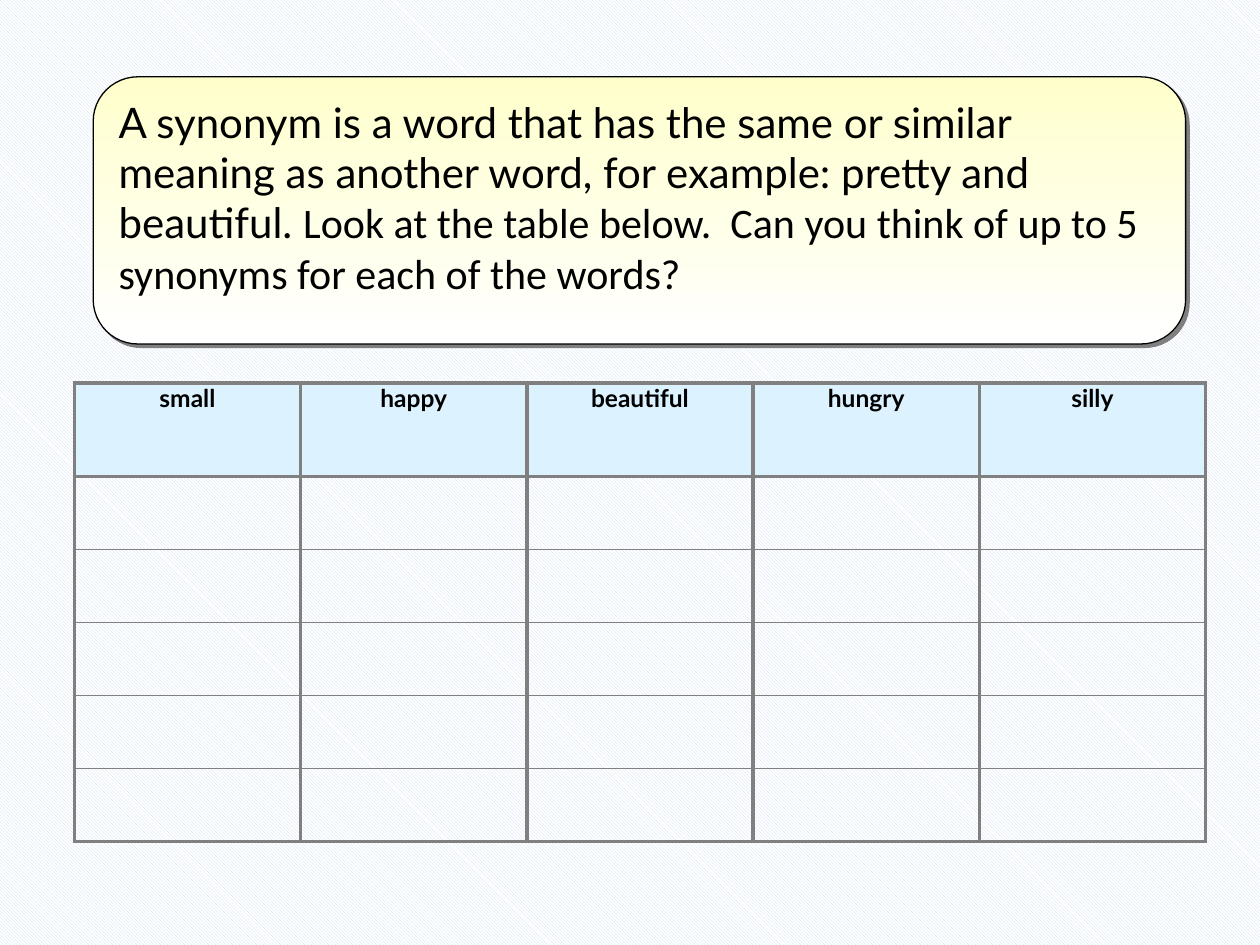
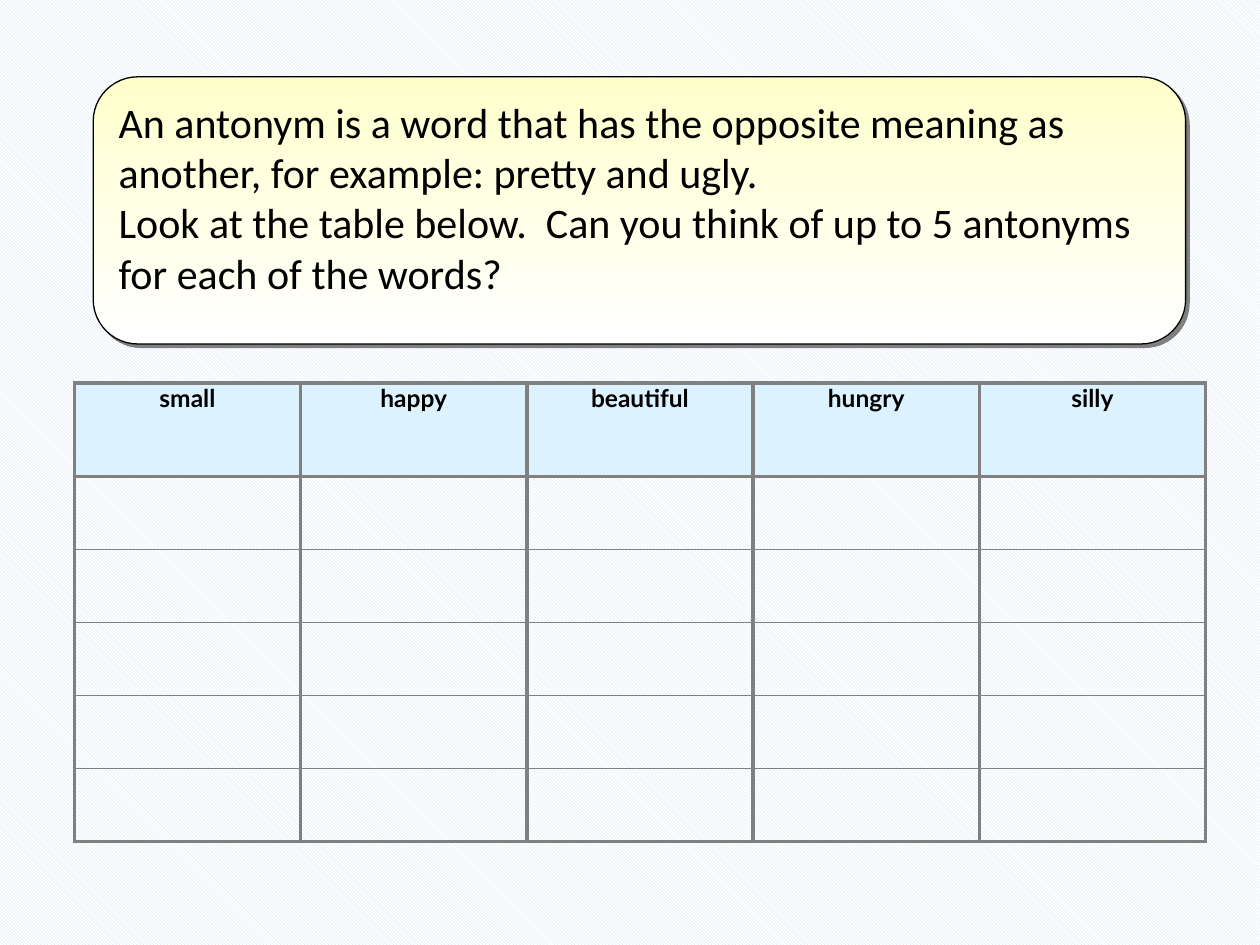
"""Build two vocabulary slides, one on synonyms and one on antonyms."""
from dataclasses import dataclass

import pptx
import pptx.dml.color
import pptx.enum.dml
import pptx.enum.shapes
import pptx.enum.text
import pptx.oxml
import pptx.oxml.ns
import pptx.util

EMU_PER_PX = 9144
COLORS = {
    "ink": "000000",
    "paper": "FFFFFF",
    "hatch": "C6D9F1",
    "cream": "FFFFCC",
    "header": "DDF2FF",
    "gray": "808080",
}
HEADING_FONT = "Lato"
BODY_FONT = "Calibri"
WORDS = ["small", "happy", "beautiful", "hungry", "silly"]
ANSWER_ROWS = 5
HEADER_HEIGHT = 74
ANSWER_HEIGHT = 58
THICK, THIN = 2.25, 1


@dataclass(frozen=True)
class Area:
    left: int
    top: int
    width: int
    height: int

    def emu(self) -> list[int]:
        return [px(side) for side in (self.left, self.top, self.width, self.height)]


@dataclass(frozen=True)
class Span:
    text: str
    font: str = BODY_FONT


@dataclass(frozen=True)
class Lesson:
    paragraphs: list[list[Span]]


INSTRUCTION_AREA = Area(74, 61, 867, 212)
TABLE_AREA = Area(59, 304, 898, HEADER_HEIGHT + ANSWER_ROWS * ANSWER_HEIGHT)
LESSONS = [
    Lesson([[
        Span("A synonym is a word that has the same or similar meaning as another word, "
             "for example: pretty and beautiful. ", HEADING_FONT),
        Span("Look at the table below.  Can you think of up to 5 synonyms for each of the words?"),
    ]]),
    Lesson([
        [Span("An antonym is a word that has the opposite meaning as another, "
              "for example: pretty and ugly.")],
        [Span("Look at the table below.  Can you think of up to 5 antonyms for each of the words?")],
    ]),
]


def px(length: float) -> pptx.util.Emu:
    return pptx.util.Emu(round(length * EMU_PER_PX))


def rgb(name: str) -> pptx.dml.color.RGBColor:
    return pptx.dml.color.RGBColor.from_string(COLORS[name])


def format_run(run, font: str, size: int, bold: bool = False) -> None:
    run.font.name = font
    run.font.size = pptx.util.Pt(size)
    run.font.bold = bold
    run.font.color.rgb = rgb("ink")


def set_background(deck) -> None:
    fill = deck.slide_master.background.fill
    fill.patterned()
    fill.pattern = pptx.enum.dml.MSO_PATTERN.DARK_DOWNWARD_DIAGONAL
    fill.fore_color.rgb = rgb("hatch")
    fill.back_color.rgb = rgb("paper")


def add_shadow(shape) -> None:
    shape.shadow.inherit = False
    effects = shape.element.spPr.find(pptx.oxml.ns.qn("a:effectLst"))
    effects.append(pptx.oxml.parse_xml(
        f'<a:outerShdw {pptx.oxml.ns.nsdecls("a")} dist="{pptx.util.Pt(2.8)}" dir="2700000" '
        f'algn="ctr" rotWithShape="0"><a:srgbClr val="{COLORS["gray"]}"/></a:outerShdw>'))


def add_instructions(page, lesson: Lesson) -> None:
    box = page.shapes.add_shape(
        pptx.enum.shapes.MSO_SHAPE.ROUNDED_RECTANGLE, *INSTRUCTION_AREA.emu())
    box.fill.gradient()
    box.fill.gradient_angle = 270
    for stop, color in zip(box.fill.gradient_stops, ("cream", "paper")):
        stop.color.rgb = rgb(color)
    box.line.color.rgb = rgb("ink")
    box.line.width = pptx.util.Pt(0.75)
    add_shadow(box)
    frame = box.text_frame
    frame.word_wrap = True
    frame.vertical_anchor = pptx.enum.text.MSO_ANCHOR.TOP
    for index, spans in enumerate(lesson.paragraphs):
        para = frame.add_paragraph() if index else frame.paragraphs[0]
        para.alignment = pptx.enum.text.PP_ALIGN.LEFT
        for span in spans:
            run = para.add_run()
            run.text = span.text
            format_run(run, span.font, 24)


def set_borders(cell, top: float, bottom: float) -> None:
    properties = cell._tc.get_or_add_tcPr()
    for side, width in (("L", THICK), ("R", THICK), ("T", top), ("B", bottom)):
        properties.append(pptx.oxml.parse_xml(
            f'<a:ln{side} {pptx.oxml.ns.nsdecls("a")} w="{pptx.util.Pt(width)}"><a:solidFill>'
            f'<a:srgbClr val="{COLORS["gray"]}"/></a:solidFill></a:ln{side}>'))


def fill_header(cell, word: str) -> None:
    cell.fill.solid()
    cell.fill.fore_color.rgb = rgb("header")
    cell.margin_left = cell.margin_right = px(7)
    cell.margin_top = cell.margin_bottom = 0
    para = cell.text_frame.paragraphs[0]
    para.text = word
    para.alignment = pptx.enum.text.PP_ALIGN.CENTER
    para.space_before = para.space_after = pptx.util.Pt(6)
    format_run(para.runs[0], HEADING_FONT, 14, bold=True)


def add_word_table(page) -> None:
    table = page.shapes.add_table(ANSWER_ROWS + 1, len(WORDS), *TABLE_AREA.emu()).table
    table.first_row = table.horz_banding = False
    for column in table.columns:
        column.width = px(TABLE_AREA.width / len(WORDS))
    for index, row in enumerate(table.rows):
        row.height = px(ANSWER_HEIGHT if index else HEADER_HEIGHT)
        top = THICK if index <= 1 else THIN
        bottom = THICK if index in (0, ANSWER_ROWS) else THIN
        for cell, word in zip(row.cells, WORDS):
            set_borders(cell, top, bottom)
            if index == 0:
                fill_header(cell, word)
            else:
                cell.fill.background()


def main() -> None:
    deck = pptx.Presentation()
    deck.slide_width, deck.slide_height = px(1000), px(750)
    set_background(deck)
    blank = deck.slide_layouts.get_by_name("Blank")
    for lesson in LESSONS:
        page = deck.slides.add_slide(blank)
        add_instructions(page, lesson)
        add_word_table(page)
    deck.save("out.pptx")


if __name__ == "__main__":
    main()
